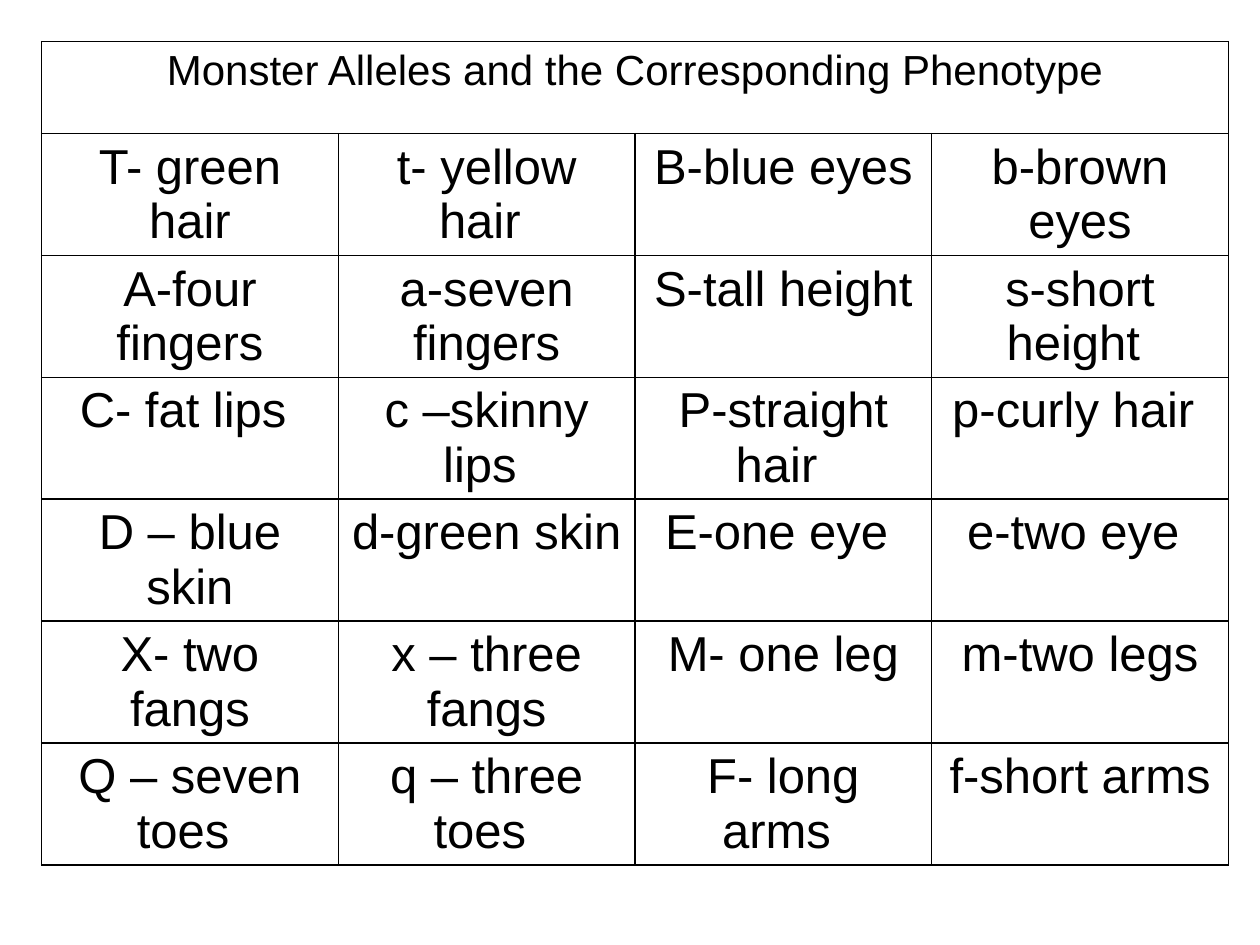
"""Build a slide with a table of monster alleles and their phenotypes."""
from lxml.etree import SubElement as Sub
from pptx import Presentation
from pptx.dml.color import RGBColor as Rgb
from pptx.enum.text import PP_ALIGN as Align
from pptx.oxml.ns import qn
from pptx.util import Inches, Pt

TITLE = "Monster Alleles and the Corresponding Phenotype"
TRAITS = [
    ("T- green hair", "t- yellow hair ", "B-blue eyes", "b-brown eyes"),
    ("A-four fingers", "a-seven fingers", "S-tall height", "s-short height "),
    ("C- fat lips ", "c –skinny lips ", "P-straight hair ", "p-curly hair "),
    ("D – blue skin", "d-green skin ", "E-one eye ", "e-two eye "),
    ("X- two fangs", "x – three fangs", "M- one leg", "m-two legs"),
    ("Q – seven toes ", "q – three toes ", "F- long arms ", "f-short arms"),
]
COLORS = {"ink": "000000", "paper": "FFFFFF"}
EDGE, WIDE, HIGH, ROW = 0.33, 9.42, 6.62, 0.73
SIZES = {"title": Pt(24), "trait": Pt(28)}


def frame(cell):
    props = cell._tc.get_or_add_tcPr()
    for spot, side in enumerate(("lnL", "lnR", "lnT", "lnB")):
        line = props.makeelement(qn(f"a:{side}"), {"w": str(Pt(1))})
        props.insert(spot, line)
        fill = Sub(line, qn("a:solidFill"))
        Sub(fill, qn("a:srgbClr"), val=COLORS["ink"])


def write(cell, text, size):
    para = cell.text_frame.paragraphs[0]
    para.alignment = Align.CENTER
    run = para.add_run()
    run.text = text
    look = {"name": "Arial", "size": size, "bold": False}
    for key, value in look.items():
        setattr(run.font, key, value)
    run.font.color.rgb = Rgb.from_string(COLORS["ink"])


def main():
    deck = Presentation()
    deck.slide_width, deck.slide_height = Inches(10), Inches(7.5)
    slide = deck.slides.add_slide(deck.slide_layouts[6])
    count, span = len(TRAITS) + 1, len(TRAITS[0])
    holder = slide.shapes.add_table(
        count, span, Inches(EDGE), Inches(EDGE), Inches(WIDE), Inches(HIGH))
    table = holder.table
    for row in table.rows:
        row.height = Inches(ROW)
    holder.height = Inches(HIGH)

    for cell in table.iter_cells():
        cell.fill.solid()
        cell.fill.fore_color.rgb = Rgb.from_string(COLORS["paper"])
        frame(cell)

    head = table.cell(0, 0)
    head.merge(table.cell(0, span - 1))
    write(head, TITLE, SIZES["title"])
    for y, traits in enumerate(TRAITS, 1):
        for x, text in enumerate(traits):
            write(table.cell(y, x), text, SIZES["trait"])
    deck.save("out.pptx")


if __name__ == "__main__":
    main()
